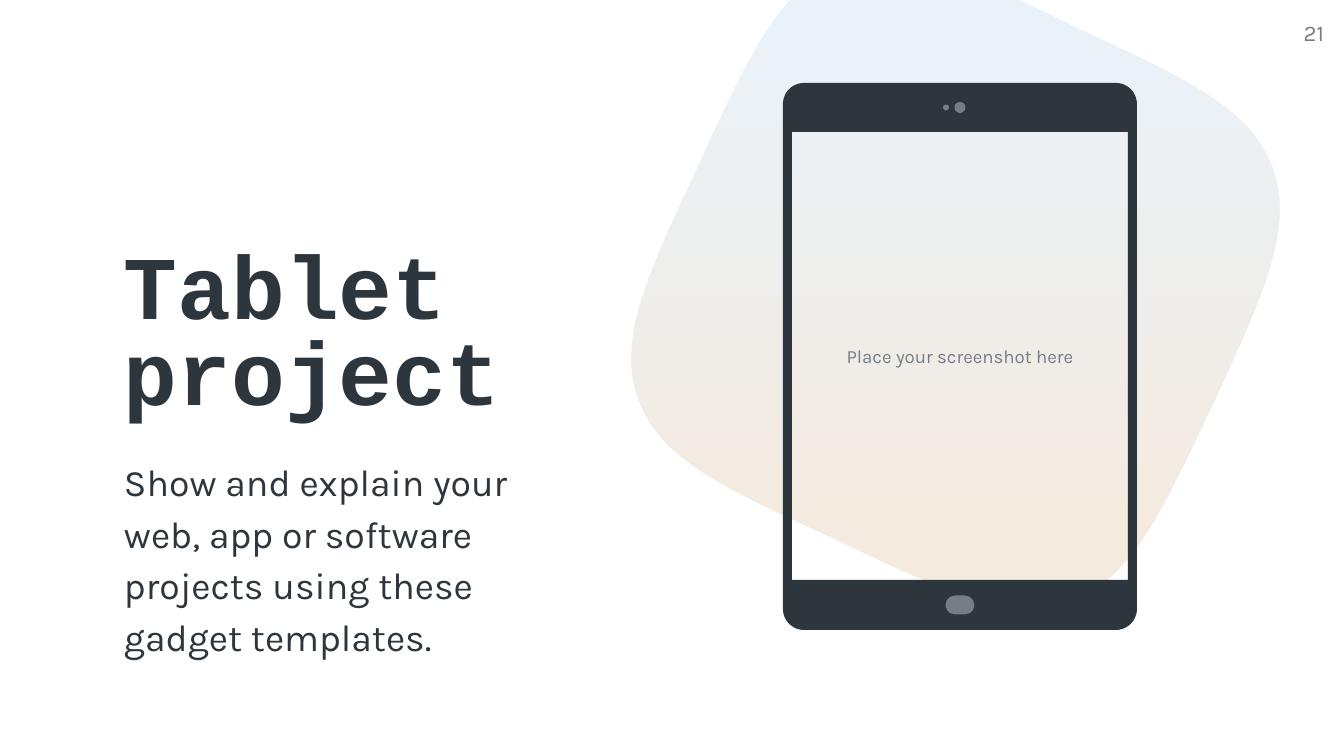
from math import cos, pi, sin

from pptx import Presentation
from pptx.dml.color import RGBColor
from pptx.enum.shapes import MSO_SHAPE
from pptx.enum.text import MSO_ANCHOR, MSO_AUTO_SIZE, PP_ALIGN
from pptx.util import Inches, Pt

PX = Inches(10) / 1344
WIDTH, HEIGHT = 1344, 756

DARK = RGBColor(0x2E, 0x36, 0x3D)
GRAY = RGBColor(0x76, 0x7E, 0x85)
WHITE = RGBColor(0xFF, 0xFF, 0xFF)
SKY = RGBColor(0xE9, 0xF2, 0xF9)
PEACH = RGBColor(0xF8, 0xE7, 0xD5)

HEADING_FONT, BODY_FONT = "Courier New", "Karla"
LEFT, CENTER, RIGHT = PP_ALIGN.LEFT, PP_ALIGN.CENTER, PP_ALIGN.RIGHT
TOP, MIDDLE, BOTTOM = MSO_ANCHOR.TOP, MSO_ANCHOR.MIDDLE, MSO_ANCHOR.BOTTOM
NO_FIT = MSO_AUTO_SIZE.NONE
OVAL, ROUNDED = MSO_SHAPE.OVAL, MSO_SHAPE.ROUNDED_RECTANGLE

BLOB_START = (1019, 0)
BLOB_CURVES = [
    ((1036, 8), (1055, 16), (1075, 27)),
    ((1188, 79), (1251, 108), (1273, 168)),
    ((1294, 228), (1266, 290), (1214, 403)),
    ((1160, 516), (1132, 579), (1071, 601)),
    ((1011, 622), (949, 594), (836, 540)),
    ((723, 488), (660, 460), (638, 399)),
    ((617, 339), (646, 277), (699, 164)),
    ((734, 87), (759, 34), (790, 0)),
]


def emu(*lengths):
    """Turn px lengths into whole EMU."""
    return [round(length * PX) for length in lengths]


def paint(shape, color):
    """Give a shape a flat fill with no line or shadow."""
    shape.shadow.inherit = False
    shape.fill.solid()
    shape.fill.fore_color.rgb = color
    shape.line.fill.background()


def add_outline(shapes, contours, color):
    """Draw closed contours of px points as one filled shape."""
    first, *others = contours
    builder = shapes.build_freeform(*emu(*first[0]))
    builder.add_line_segments([emu(*point) for point in first[1:]])
    for contour in others:
        builder.move_to(*emu(*contour[0]))
        builder.add_line_segments([emu(*point) for point in contour[1:]])
    paint(builder.convert_to_shape(), color)


def curve_points(start, curves, steps=24):
    """Sample a chain of cubic Bezier curves."""
    points = [start]
    for control_1, control_2, end in curves:
        corners = list(zip(points[-1], control_1, control_2, end))
        for step in range(1, steps + 1):
            t = step / steps
            u = 1 - t
            points.append(tuple(
                u**3 * a + 3 * u * u * t * b + 3 * u * t * t * c + t**3 * d
                for a, b, c, d in corners))
    return points


def rounded_points(left, top, width, height, radius, steps=12):
    """Trace a rounded rectangle clockwise from its left side."""
    right, bottom = left + width - radius, top + height - radius
    centers = [(left + radius, top + radius), (right, top + radius),
               (right, bottom), (left + radius, bottom)]
    return [(x + radius * cos(angle), y + radius * sin(angle))
            for corner, (x, y) in enumerate(centers)
            for angle in (pi + (corner + step / steps) * pi / 2
                          for step in range(steps + 1))]


def set_frame(shape, box, anchor, inset=0):
    """Place a text shape and return its formatted frame."""
    shape.left, shape.top, shape.width, shape.height = emu(*box)
    frame = shape.text_frame
    frame.word_wrap = True
    frame.auto_size = NO_FIT
    frame.vertical_anchor = anchor
    frame.margin_left, frame.margin_top, frame.margin_right, frame.margin_bottom = (
        emu(inset) * 4)
    return frame


def add_span(para, text, size, color, font=BODY_FONT, bold=False):
    """Add one formatted run."""
    span = para.add_run()
    span.text = text
    span.font.size = Pt(size)
    span.font.name = font
    span.font.bold = bold
    span.font.color.rgb = color


def add_label(page, box, text, size, align, anchor, inset=0):
    """Add a one-line grey text box."""
    frame = set_frame(page.shapes.add_textbox(0, 0, 0, 0), box, anchor, inset)
    para = frame.paragraphs[0]
    para.alignment = align
    add_span(para, text, size, GRAY)


def add_backdrop(page, box):
    """Show a gradient background through a blob cut from a white sheet."""
    fill = page.background.fill
    fill.gradient()
    fill.gradient_angle = 270
    for stop, color, position in zip(fill.gradient_stops, (SKY, PEACH), (0, 1)):
        stop.color.rgb = color
        stop.position = position
    left, top, width, height = box
    edge = [(0, 0), (0, height), (width, height), (width, 0)]
    sheet = curve_points(BLOB_START, BLOB_CURVES) + edge
    add_outline(page.shapes, [[(left + x, top + y) for x, y in sheet]], WHITE)


def add_tablet(page, box):
    """Draw a tablet with an open screen, a camera and a home button."""
    left, top, width, height = box
    bezel, head, foot = 9, 49, 50
    screen = (left + bezel, top + head, width - 2 * bezel, height - head - foot)
    add_label(page, screen, "Place your screenshot here", 10, CENTER, MIDDLE, 13)
    x, y, screen_width, screen_height = screen
    hole = [(x, y), (x, y + screen_height),
            (x + screen_width, y + screen_height), (x + screen_width, y)]
    tablet = page.shapes.add_group_shape()
    add_outline(tablet.shapes, [rounded_points(*box, 21), hole], DARK)
    middle = left + width / 2
    for kind, center_x, center_y, part_width, part_height in (
            (ROUNDED, middle, top + height - foot / 2, 29, 19),
            (OVAL, middle - 14, top + head / 2, 6, 6),
            (OVAL, middle, top + head / 2, 11, 11)):
        part = tablet.shapes.add_shape(kind, *emu(
            center_x - part_width / 2, center_y - part_height / 2,
            part_width, part_height))
        if kind == ROUNDED:
            part.adjustments[0] = 0.5
        paint(part, GRAY)


def add_message(page, box):
    """Write the heading and its explanation in the title, in front of the rest."""
    title = page.shapes.title
    page.shapes.element.append(title.element)
    frame = set_frame(title, box, BOTTOM)
    heading = frame.paragraphs[0]
    heading.alignment = LEFT
    heading.line_spacing = 0.8
    add_span(heading, "Tablet", 48, DARK, HEADING_FONT, True)
    heading.add_line_break()
    add_span(heading, "project", 48, DARK, HEADING_FONT, True)
    para = frame.add_paragraph()
    para.alignment = LEFT
    para.line_spacing = 1.15
    para.space_before = para.space_after = Pt(16)
    add_span(para, "Show and explain your web, app or software projects "
             "using these gadget templates.", 20, DARK)


def main():
    """Build and save the slide."""
    deck = Presentation()
    deck.slide_width, deck.slide_height = emu(WIDTH, HEIGHT)
    page = deck.slides.add_slide(deck.slide_layouts[5])
    add_backdrop(page, (0, 0, WIDTH, HEIGHT))
    add_label(page, (1243, 19, 81, 58), "21", 12, RIGHT, TOP)
    add_tablet(page, (783, 83, 354, 547))
    add_message(page, (124, 121, 442, 538))
    deck.save("out.pptx")


if __name__ == "__main__":
    main()
